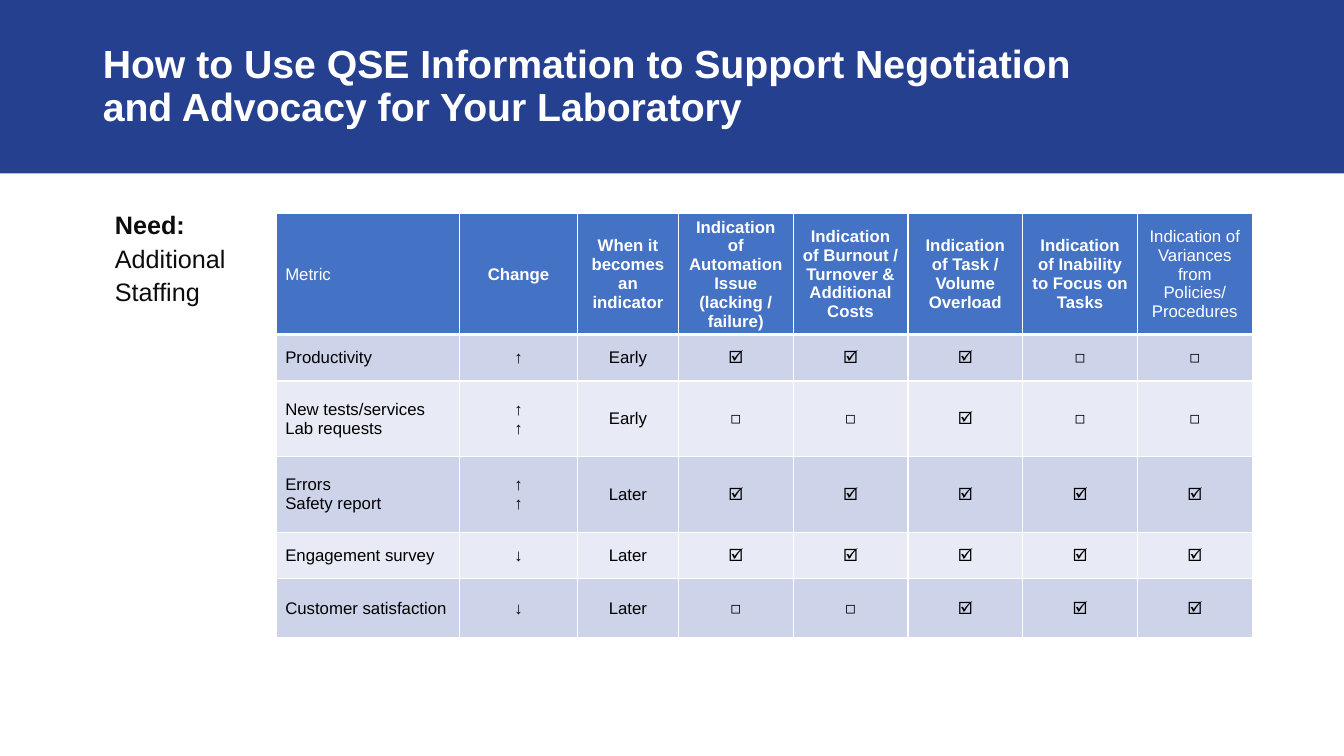
from dataclasses import dataclass

from lxml.etree import SubElement
from pptx import Presentation
from pptx.dml.color import RGBColor
from pptx.enum.shapes import MSO_SHAPE
from pptx.enum.text import MSO_ANCHOR, MSO_AUTO_SIZE, PP_ALIGN
from pptx.oxml.ns import qn
from pptx.util import Inches, Pt

SLIDE_WIDTH, SLIDE_HEIGHT = Inches(13.33), Inches(7.5)


@dataclass(frozen=True)
class Theme:
    font: str = "Arial"
    banner: str = "25408F"
    header: str = "4472C4"
    bands: tuple = ("CDD4EA", "E8EBF5")
    light: str = "FFFFFF"
    need: str = "0C0C0C"
    dark: str = "000000"
    title_size: int = 28
    need_size: int = 18
    table_size: int = 12
    rule: int = 1
    header_rule: int = 3


THEME = Theme()

# Places and sizes are percentages of the slide's width and height.
BANNER = (0, 0, 100, 22.93)
TITLE = (6.9, 1.87, 86.25, 19.33)
NEED = (6.9, 26.67, 12.45, 57.07)
TABLE_LEFT, TABLE_TOP = 20.55, 28.27
COLUMN_SHARES = [13.65, 8.78, 7.5] + [8.54] * 5
ROW_SHARES = [15.87, 6.13, 10, 10, 6.13, 7.87]

HEADERS = [
    "Metric",
    "Change",
    "When it becomes an indicator",
    "Indication of Automation Issue (lacking / failure)",
    "Indication of Burnout / Turnover & Additional Costs",
    "Indication of Task / Volume Overload",
    "Indication of Inability to Focus on Tasks",
    "Indication of Variances from Policies/ Procedures",
]
YES, NO = "🗹", "◻"
METRICS = [
    ("Productivity", "↑", "Early", YES, YES, YES, NO, NO),
    ("New tests/services\nLab requests", "↑\n↑", "Early", NO, NO, YES, NO, NO),
    ("Errors\nSafety report", "↑\n↑", "Later", YES, YES, YES, YES, YES),
    ("Engagement survey", "↓", "Later", YES, YES, YES, YES, YES),
    ("Customer satisfaction", "↓", "Later", NO, NO, YES, YES, YES),
]


def across(share):
    return round(SLIDE_WIDTH * share / 100)


def down(share):
    return round(SLIDE_HEIGHT * share / 100)


def box(left, top, width, height):
    return across(left), down(top), across(width), down(height)


def apply(target, values):
    for name, value in values.items():
        setattr(target, name, value)


def format_font(font, size, color, bold):
    apply(font, {"name": THEME.font, "size": Pt(size), "bold": bold})
    font.color.rgb = RGBColor.from_string(color)


def place(shape, area):
    apply(shape, dict(zip(("left", "top", "width", "height"), box(*area))))


def add_banner(slide):
    """Draw the band and send it behind the title."""
    banner = slide.shapes.add_shape(MSO_SHAPE.RECTANGLE, *box(*BANNER))
    banner.shadow.inherit = False
    banner.fill.solid()
    banner.fill.fore_color.rgb = RGBColor.from_string(THEME.banner)
    banner.line.fill.background()
    slide.shapes[0].element.addprevious(banner.element)


def fill_title(title, text):
    place(title, TITLE)
    frame = title.text_frame
    frame.text = text
    apply(frame, {"word_wrap": True, "auto_size": MSO_AUTO_SIZE.NONE,
                  "vertical_anchor": MSO_ANCHOR.MIDDLE})
    paragraph = frame.paragraphs[0]
    apply(paragraph, {"alignment": PP_ALIGN.LEFT, "line_spacing": 0.9})
    format_font(paragraph.font, THEME.title_size, THEME.light, True)


def fill_need(body, label, need):
    place(body, NEED)
    frame = body.text_frame
    apply(frame, {"word_wrap": True, "auto_size": MSO_AUTO_SIZE.NONE,
                  "vertical_anchor": MSO_ANCHOR.TOP})
    paragraph = frame.paragraphs[0]
    properties = paragraph._p.get_or_add_pPr()
    properties.set("marL", str(Inches(0.12)))
    properties.set("indent", "0")
    SubElement(properties, qn("a:buNone"))
    apply(paragraph, {"alignment": PP_ALIGN.LEFT, "line_spacing": 1.1,
                      "space_before": Pt(0)})
    for text, bold in ((label, True), (need, False)):
        run = paragraph.add_run()
        run.text = text
        format_font(run.font, THEME.need_size, THEME.need, bold)


def add_borders(cell, top, bottom):
    widths = {"lnL": THEME.rule, "lnR": THEME.rule, "lnT": top, "lnB": bottom}
    properties = cell._tc.get_or_add_tcPr()
    for side, width in widths.items():
        line = SubElement(properties, qn(f"a:{side}"), w=str(Pt(width)))
        fill = SubElement(line, qn("a:solidFill"))
        SubElement(fill, qn("a:srgbClr"), val=THEME.light)


def fill_cell(cell, text, fill, color, bold, alignment):
    cell.text = text
    apply(cell, {"vertical_anchor": MSO_ANCHOR.MIDDLE,
                 "margin_left": Inches(0.09), "margin_right": Inches(0.09),
                 "margin_top": Inches(0.04), "margin_bottom": Inches(0.04)})
    cell.fill.solid()
    cell.fill.fore_color.rgb = RGBColor.from_string(fill)
    for paragraph in cell.text_frame.paragraphs:
        paragraph.alignment = alignment
        format_font(paragraph.font, THEME.table_size, color, bold)


def add_metrics_table(slide):
    rows = [HEADERS, *METRICS]
    area = (TABLE_LEFT, TABLE_TOP, sum(COLUMN_SHARES), sum(ROW_SHARES))
    table = slide.shapes.add_table(len(rows), len(HEADERS), *box(*area)).table
    for column, share in zip(table.columns, COLUMN_SHARES):
        column.width = across(share)
    for row, share in zip(table.rows, ROW_SHARES):
        row.height = down(share)

    last = len(HEADERS) - 1
    for row_index, row in enumerate(rows):
        is_header = row_index == 0
        fill = THEME.header if is_header else THEME.bands[(row_index - 1) % 2]
        color = THEME.light if is_header else THEME.dark
        top = THEME.header_rule if row_index == 1 else THEME.rule
        bottom = THEME.header_rule if is_header else THEME.rule
        for column_index, text in enumerate(row):
            cell = table.cell(row_index, column_index)
            bold = is_header and 0 < column_index < last
            alignment = PP_ALIGN.CENTER if column_index else PP_ALIGN.LEFT
            add_borders(cell, top, bottom)
            fill_cell(cell, text, fill, color, bold, alignment)


def main():
    presentation = Presentation()
    apply(presentation, {"slide_width": SLIDE_WIDTH, "slide_height": SLIDE_HEIGHT})
    slide = presentation.slides.add_slide(presentation.slide_layouts[1])
    add_banner(slide)
    fill_title(slide.shapes.title,
               "How to Use QSE Information to Support Negotiation\v"
               "and Advocacy for Your Laboratory")
    fill_need(slide.placeholders[1], "Need: ", "Additional Staffing")
    add_metrics_table(slide)
    presentation.save("out.pptx")


if __name__ == "__main__":
    main()
